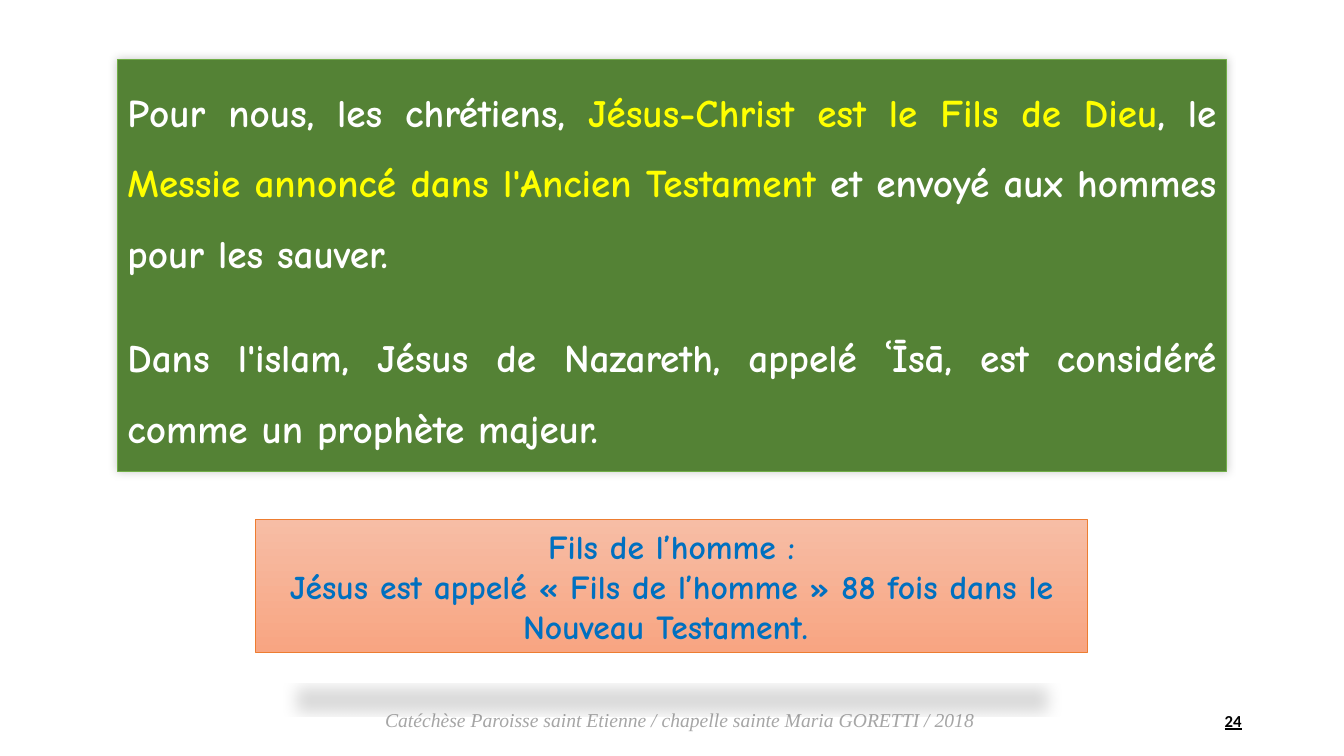
from lxml.etree import SubElement
from pptx import Presentation
from pptx.dml.color import RGBColor
from pptx.enum.shapes import MSO_SHAPE
from pptx.enum.text import MSO_ANCHOR, MSO_AUTO_SIZE, PP_ALIGN
from pptx.oxml.ns import qn
from pptx.util import Pt

RECT = MSO_SHAPE.RECTANGLE
TOP, MID = MSO_ANCHOR.TOP, MSO_ANCHOR.MIDDLE
GROW = MSO_AUTO_SIZE.SHAPE_TO_FIT_TEXT
LEFT, RIGHT = PP_ALIGN.LEFT, PP_ALIGN.RIGHT
CENTER, JUST = PP_ALIGN.CENTER, PP_ALIGN.JUSTIFY

HUES = {
    "white": "FFFFFF", "black": "000000", "gray": "A6A6A6",
    "green": "548235", "lime": "70AD47", "yellow": "FFFF00",
    "blue": "0070C0", "orange": "ED7D31",
    "peach": "F7BDA5", "coral": "F8A582",
}


def write(shape, paras, font="Comic Neue", size=28, hue="white", align=LEFT,
          anchor=TOP, lines=None, gap=0, grow=True, bold=False,
          italic=False, under=False):
    frame = shape.text_frame
    frame.word_wrap = True
    frame.vertical_anchor = anchor
    if grow:
        frame.auto_size = GROW
    for i, runs in enumerate(paras):
        para = frame.add_paragraph() if i else frame.paragraphs[0]
        para.alignment = align
        if lines:
            para.line_spacing = lines
        if i and gap:
            para.space_before = Pt(gap)
        for text, tint in runs:
            run = para.add_run()
            run.text = text
            run.font.name = font
            run.font.size = Pt(size)
            run.font.bold = bold
            run.font.italic = italic
            run.font.underline = under
            run.font.color.rgb = RGBColor.from_string(HUES[tint or hue])


class Deck:
    def __init__(self, wide, high):
        self.show = Presentation()
        self.show.slide_width = Pt(wide)
        self.show.slide_height = Pt(high)
        self.slide = self.show.slides.add_slide(self.show.slide_layouts[6])

    def color(self, name):
        return RGBColor.from_string(HUES[name])

    def label(self, box, text, **style):
        shape = self.slide.shapes.add_textbox(*map(Pt, box))
        write(shape, [[(text, None)]], **style)

    def panel(self, box, fills, edge, shade, paras, **style):
        shape = self.slide.shapes.add_shape(RECT, *map(Pt, box))
        if len(fills) == 1:
            shape.fill.solid()
            shape.fill.fore_color.rgb = self.color(fills[0])
        else:
            shape.fill.gradient()
            shape.fill.gradient_angle = 270
            for stop, name in zip(shape.fill.gradient_stops, fills):
                stop.color.rgb = self.color(name)
        shape.line.color.rgb = self.color(edge)
        shape.line.width = Pt(0.5)
        self.shadow(shape, **shade)
        write(shape, paras, **style)

    def shadow(self, shape, alpha, blur, dist, turn, **scale):
        shape.shadow.inherit = False
        effects = shape.element.spPr.find(qn("a:effectLst"))
        outer = SubElement(effects, qn("a:outerShdw"), blurRad=str(Pt(blur)),
                           dist=str(Pt(dist)), dir=str(turn * 60000),
                           rotWithShape="0")
        for axis, share in scale.items():
            outer.set(axis, str(share * 1000))
        tone = SubElement(outer, qn("a:srgbClr"), val=HUES["black"])
        SubElement(tone, qn("a:alpha"), val=str(alpha * 1000))

    def save(self):
        self.show.save("out.pptx")


def main():
    deck = Deck(960, 540)
    deck.label((268, 502, 445, 24.5),
               "Catéchèse Paroisse saint Etienne / chapelle sainte Maria GORETTI / 2018",
               font="Times New Roman", size=14, hue="gray", italic=True)
    deck.label((678, 500.5, 216, 28.75), "24", font="Calibri", size=12,
               hue="black", align=RIGHT, anchor=MID, grow=False,
               bold=True, under=True)
    deck.panel((84, 42.5, 792, 294.5), ["green"], "lime",
               dict(alpha=20, blur=6, dist=0, turn=315),
               [[("Pour nous, les chrétiens, ", None),
                 ("Jésus-Christ est le Fils de Dieu", "yellow"),
                 (", le ", None),
                 ("Messie annoncé dans l'Ancien Testament ", "yellow"),
                 ("et envoyé aux hommes pour les sauver.", None)],
                [("Dans l'islam, Jésus de Nazareth, appelé ʿĪsā, est considéré "
                  "comme un prophète majeur.", None)]],
               align=JUST, lines=1.5, gap=24, bold=True)
    deck.panel((182.25, 371.25, 594.75, 94.5), ["peach", "coral"], "orange",
               dict(alpha=15, blur=12, dist=25, turn=90, sx=90, sy=-19),
               [[("Fils de l’homme :", None)],
                [("Jésus est appelé « Fils de l’homme » 88 fois dans le "
                  "Nouveau Testament. ", None)]],
               size=24, hue="blue", align=CENTER, anchor=MID, bold=True)
    deck.save()


if __name__ == "__main__":
    main()
